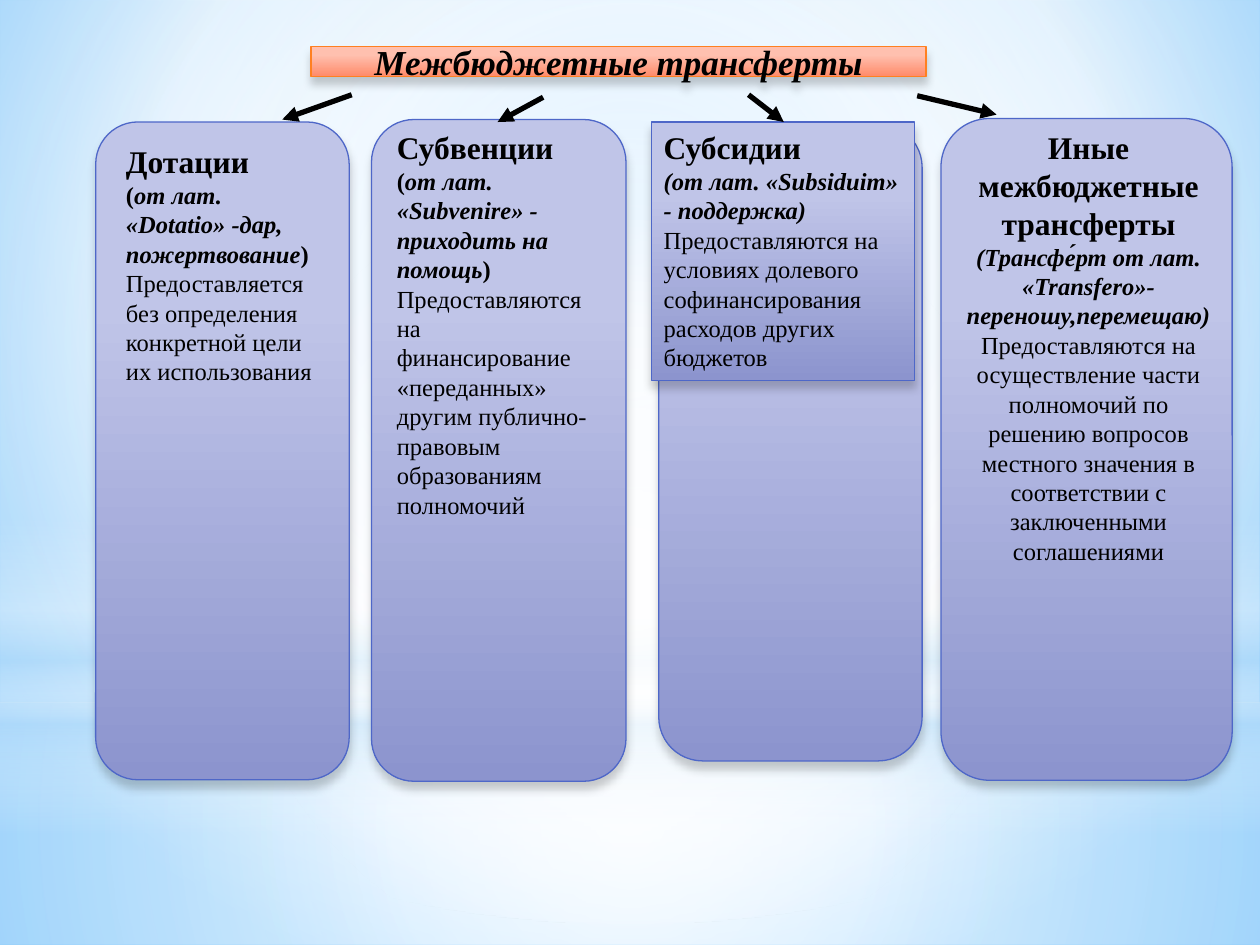
import pptx
import pptx.util
import pptx.dml.color
import pptx.enum.shapes
import pptx.enum.text
import pptx.oxml
import pptx.oxml.ns
from lxml import etree
from pptx.util import Cm, Pt

RGB = pptx.dml.color.RGBColor.from_string
SHAPE = pptx.enum.shapes.MSO_SHAPE
ALIGN = pptx.enum.text.PP_ALIGN
ANCHOR = pptx.enum.text.MSO_ANCHOR
AUTO = pptx.enum.text.MSO_AUTO_SIZE
qn = pptx.oxml.ns.qn

THEME = {
    "font": "Times New Roman", "gap_font": "Arial", "ink": "000000",
    "title": 20, "head": 18, "body": 14, "gap": 9,
    "card_line": "4E67C8", "title_line": "FF8021",
    # gradient stops: position %, colour, opacity %
    "card": [(28, "C0C5E8", 100), (100, "8C94CE", 100)],
    "title_fill": [(28, "FFC0AF", 100), (100, "FF8968", 100)],
    "back": [(0, "9ED5FF", 100), (60, "FFFFFF", 100), (100, "5BB9FF", 100)],
}

# Run formats
HEAD = dict(size=THEME["head"], bold=True)
PLAIN = dict(size=THEME["body"])
BOLD = dict(size=THEME["body"], bold=True)
TERM = dict(size=THEME["body"], bold=True, italic=True)
GAP = dict(size=THEME["gap"], font=THEME["gap_font"])
TITLE = dict(size=THEME["title"], bold=True, italic=True)

# Backdrop layers: shape, box in cm, stops, centred radial or linear
CENTRE = (50, 50, 50, 50)
BACKDROP = [
    (SHAPE.RECTANGLE, (0, 14.17, 25.4, 4.88),
     [(0, "FFFFFF", 91), (37, "FFFFFF", 76), (100, "B4DCFA", 79)], CENTRE),
    (SHAPE.RECTANGLE, (0, 0, 25.4, 14.17),
     [(0, "FFFFFF", 89), (48, "FFFFFF", 62), (100, "B4DCFA", 79)], CENTRE),
    (SHAPE.RECTANGLE, (0, 10.46, 25.4, 6.35),
     [(0, "FFFFFF", 0), (29, "FFFFFF", 30), (45, "B4DCFA", 40),
      (55, "FFFFFF", 26), (65, "B4DCFA", 60), (100, "FFFFFF", 0)], None),
    (SHAPE.OVAL, (0, 4.45, 25.4, 14.17),
     [(0, "FFFFFF", 100), (56, "FFFFFF", 0)], CENTRE),
]

HEADING = ("Межбюджетные трансферты", (6.27, 0.94, 12.4, 0.61))

# One entry per transfer: card, text box, arrow, paragraphs of runs
TRANSFERS = [
    dict(card=(1.93, 2.46, 5.11, 13.26), text=(2.29, 2.74, 4.39, 5.21),
         arrow=(7.09, 1.91, 5.69, 2.41),
         paras=[[("Дотации", HEAD)],
                [("(", BOLD), ("от лат. «Dotatio» -дар, пожертвование", TERM),
                 (")", BOLD)],
                [("Предоставляется без определения конкретной цели "
                  "их использования", PLAIN)]]),
    dict(card=(7.49, 2.41, 5.13, 13.34), text=(7.75, 2.46, 4.6, 8.2),
         arrow=(10.95, 1.96, 10.03, 2.46),
         paras=[[("Субвенции", HEAD)],
                [("(", BOLD),
                 ("от лат. «Subvenire» - приходить на помощь", TERM),
                 (")", BOLD)],
                [("Предоставляются на финансирование «переданных» другим "
                  "публично-правовым образованиям полномочий", PLAIN)]]),
    dict(card=(13.28, 2.49, 5.31, 12.85), text=(13.13, 2.46, 5.31, 5.21),
         arrow=(15.09, 1.91, 15.8, 2.46), framed=True,
         paras=[[("Субсидии", HEAD)],
                [("(от лат. «Subsiduim» - поддержка)", TERM)],
                [("Предоставляются на условиях долевого софинансирования "
                  "расходов других бюджетов", PLAIN)]]),
    dict(card=(18.97, 2.39, 5.87, 13.34), text=(19.2, 2.46, 5.49, 9.14),
         arrow=(18.49, 1.93, 20.09, 2.31), align=ALIGN.CENTER,
         paras=[[("Иные межбюджетные трансферты", HEAD), (" ", GAP),
                 ("(Трансфе́рт от лат. «Transfero»-переношу,перемещаю) ", TERM),
                 ("Предоставляются на осуществление части полномочий по "
                  "решению вопросов местного значения в соответствии с "
                  "заключенными соглашениями", PLAIN)]]),
]


def sub(parent, tag, **attrs):
    return etree.SubElement(parent, qn(tag),
                            {k: str(v) for k, v in attrs.items()})


def set_gradient(fill, element, stops, focus=None):
    """Top-down gradient, or a radial one when a focus rectangle is given."""
    fill.gradient()
    grad = next(element.iter(qn("a:gradFill")))
    for child in list(grad):
        grad.remove(child)
    gs_list = sub(grad, "a:gsLst")
    for pos, color, opacity in stops:
        gs = sub(gs_list, "a:gs", pos=pos * 1000)
        clr = sub(gs, "a:srgbClr", val=color)
        if opacity < 100:
            sub(clr, "a:alpha", val=opacity * 1000)
    if focus:
        radial = sub(grad, "a:path", path="circle")
        sub(radial, "a:fillToRect",
            **{side: v * 1000 for side, v in zip("ltrb", focus)})
    else:
        sub(grad, "a:lin", ang=90 * 60000, scaled=0)


def add_panel(slide, kind, box, stops, focus=None, line=None):
    """Gradient shape; an outlined one also casts a soft shadow."""
    sp = slide.shapes.add_shape(kind, *map(Cm, box))
    set_gradient(sp.fill, sp.element, stops, focus)
    sp.shadow.inherit = False
    if not line:
        sp.line.fill.background()
        return sp
    sp.line.color.rgb = RGB(line)
    sp.line.width = Pt(0.75)
    effects = next(sp.element.iter(qn("a:effectLst")))
    shadow = sub(effects, "a:outerShdw", blurRad=Pt(5), dist=Pt(4),
                 dir=90 * 60000, rotWithShape=0)
    sub(sub(shadow, "a:srgbClr", val="000000"), "a:alpha", val=20000)
    return sp


def add_run(p, text, size, bold=False, italic=False, font=THEME["font"]):
    r = p.add_run()
    r.text = text
    r.font.size, r.font.bold, r.font.italic = Pt(size), bold, italic
    r.font.name = font
    r.font.color.rgb = RGB(THEME["ink"])


def write(sp, paras, align=ALIGN.LEFT, anchor=ANCHOR.TOP, wrap=True,
          auto=AUTO.SHAPE_TO_FIT_TEXT):
    tf = sp.text_frame
    tf.word_wrap, tf.vertical_anchor, tf.auto_size = wrap, anchor, auto
    for i, runs in enumerate(paras):
        p = tf.add_paragraph() if i else tf.paragraphs[0]
        p.alignment = align
        for text, style in runs:
            add_run(p, text, **style)


def add_arrow(slide, ends):
    line = slide.shapes.add_connector(
        pptx.enum.shapes.MSO_CONNECTOR.STRAIGHT, *map(Cm, ends))
    line.line.color.rgb = RGB(THEME["ink"])
    line.line.width = Pt(3)
    sub(line.line._get_or_add_ln(), "a:tailEnd", type="triangle")
    sub(line.element.spPr, "a:effectLst")


def main():
    prs = pptx.Presentation()
    prs.slide_width, prs.slide_height = Cm(25.4), Cm(19.05)
    slide = prs.slides.add_slide(prs.slide_layouts[6])

    # Backdrop
    set_gradient(slide.background.fill, slide.element, THEME["back"],
                 (20, 10, 20, 60))
    for layer in BACKDROP:
        add_panel(slide, *layer)

    # Heading
    text, box = HEADING
    sp = add_panel(slide, SHAPE.RECTANGLE, box, THEME["title_fill"],
                   line=THEME["title_line"])
    write(sp, [[(text, TITLE)]], align=ALIGN.CENTER, anchor=ANCHOR.MIDDLE,
          wrap=False, auto=AUTO.NONE)

    # Cards with their texts and arrows
    for item in TRANSFERS:
        add_panel(slide, SHAPE.FLOWCHART_ALTERNATE_PROCESS, item["card"],
                  THEME["card"], line=THEME["card_line"])
        if item.get("framed"):
            sp = add_panel(slide, SHAPE.RECTANGLE, item["text"],
                           THEME["card"], line=THEME["card_line"])
        else:
            sp = slide.shapes.add_textbox(*map(Cm, item["text"]))
        write(sp, item["paras"], align=item.get("align", ALIGN.LEFT))
        add_arrow(slide, item["arrow"])

    prs.save("out.pptx")


if __name__ == "__main__":
    main()
